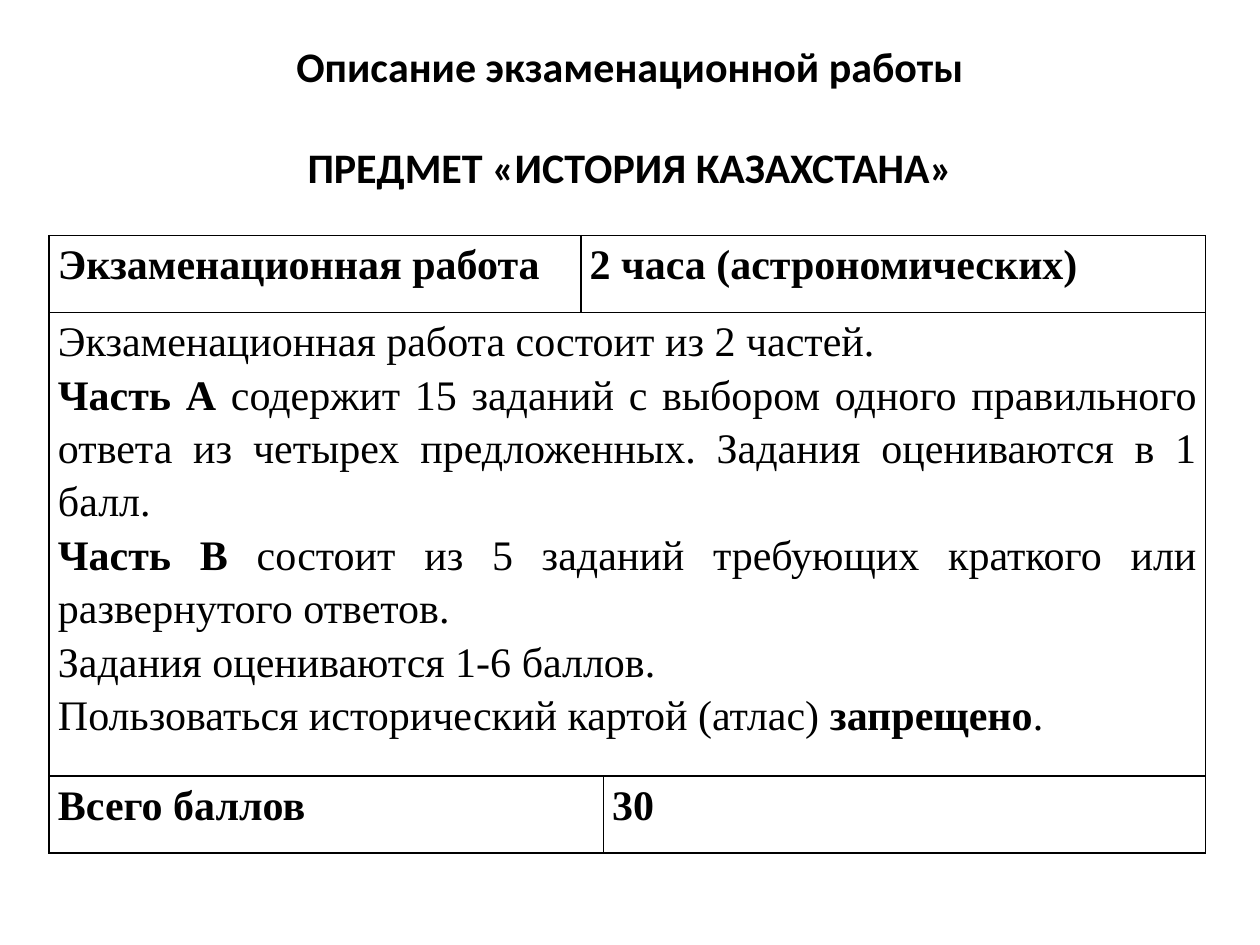
from dataclasses import dataclass

from lxml import etree
from pptx import Presentation
from pptx import util as u
from pptx.dml.color import RGBColor
from pptx.enum import text
from pptx.oxml import ns


@dataclass(frozen=True)
class Theme:
    ink: str = "000000"
    title_font: str = "Calibri"
    body_font: str = "Times New Roman"
    size: int = 24
    line_spacing: float = 1.15
    border: float = 1
    inset: float = 0.07


@dataclass(frozen=True)
class Run:
    text: str
    bold: bool = False


@dataclass(frozen=True)
class Entry:
    """A table cell: its place, column span and paragraphs of runs."""
    row: int
    col: int
    span: int
    paragraphs: tuple[tuple[Run, ...], ...]


THEME = Theme()
TITLE = ("Описание экзаменационной работы", "ПРЕДМЕТ «ИСТОРИЯ КАЗАХСТАНА»")
COLUMNS = (4.22, 0.14, 4.78)
ROWS = (0.61, 3.63, 0.61)
ENTRIES = (
    Entry(0, 0, 1, ((Run("Экзаменационная работа", True),),)),
    Entry(0, 1, 2, ((Run("2 часа (астрономических)", True),),)),
    Entry(1, 0, 3, (
        (Run("Экзаменационная работа состоит из 2 частей."),),
        (Run("Часть А", True),
         Run(" содержит 15 заданий с выбором одного правильного ответа "
             "из четырех предложенных. Задания оцениваются в 1 балл.")),
        (Run("Часть В", True),
         Run(" состоит из 5 заданий требующих краткого или развернутого ответов.")),
        (Run("Задания оцениваются 1-6 баллов."),),
        (Run("Пользоваться исторический картой (атлас) "),
         Run("запрещено", True), Run(".")),
    )),
    Entry(2, 0, 2, ((Run("Всего баллов", True),),)),
    Entry(2, 2, 1, ((Run("30", True),),)),
)


def set_font(p, name: str) -> None:
    p.font.name = name
    p.font.size = u.Pt(THEME.size)
    p.font.color.rgb = RGBColor.from_string(THEME.ink)


def add_title(slide) -> None:
    sp = slide.shapes.add_textbox(u.Inches(0.5), u.Inches(0.3),
                                  u.Inches(9), u.Inches(1.25))
    tf = sp.text_frame
    tf.word_wrap = True
    tf.vertical_anchor = text.MSO_ANCHOR.MIDDLE
    for i, line in enumerate(TITLE):
        p = tf.add_paragraph() if i else tf.paragraphs[0]
        p.text = line
        p.alignment = text.PP_ALIGN.CENTER
        p.space_before = u.Pt(29 if i else 0)
        p.font.bold = True
        set_font(p, THEME.title_font)


def style_cell(cell) -> None:
    """Clear the fill, set insets and draw all four borders."""
    cell.fill.background()
    cell.margin_left = cell.margin_right = u.Inches(THEME.inset)
    cell.margin_top = cell.margin_bottom = 0
    props = cell._tc.get_or_add_tcPr()
    for i, side in enumerate("LRTB"):
        ln = etree.Element(ns.qn(f"a:ln{side}"), w=str(u.Pt(THEME.border)))
        fill = etree.SubElement(ln, ns.qn("a:solidFill"))
        etree.SubElement(fill, ns.qn("a:srgbClr"), val=THEME.ink)
        props.insert(i, ln)


def fill_cell(cell, paragraphs: tuple[tuple[Run, ...], ...]) -> None:
    tf = cell.text_frame
    for i, runs in enumerate(paragraphs):
        p = tf.add_paragraph() if i else tf.paragraphs[0]
        p.alignment = text.PP_ALIGN.JUSTIFY
        p.line_spacing = THEME.line_spacing
        set_font(p, THEME.body_font)
        for run in runs:
            r = p.add_run()
            r.text = run.text
            r.font.bold = run.bold


def add_exam_table(slide) -> None:
    table = slide.shapes.add_table(
        len(ROWS), len(COLUMNS), u.Inches(0.39), u.Inches(1.87),
        u.Inches(sum(COLUMNS)), u.Inches(sum(ROWS))).table
    table.first_row = table.horz_banding = False
    for column, width in zip(table.columns, COLUMNS):
        column.width = u.Inches(width)
    for row, height in zip(table.rows, ROWS):
        row.height = u.Inches(height)
    for cell in table.iter_cells():
        style_cell(cell)
    for entry in ENTRIES:
        cell = table.cell(entry.row, entry.col)
        if entry.span > 1:
            cell.merge(table.cell(entry.row, entry.col + entry.span - 1))
        fill_cell(cell, entry.paragraphs)


def main() -> None:
    prs = Presentation()
    prs.slide_width, prs.slide_height = u.Inches(10), u.Inches(7.5)
    slide = prs.slides.add_slide(prs.slide_layouts[6])
    add_title(slide)
    add_exam_table(slide)
    prs.save("out.pptx")


if __name__ == "__main__":
    main()
